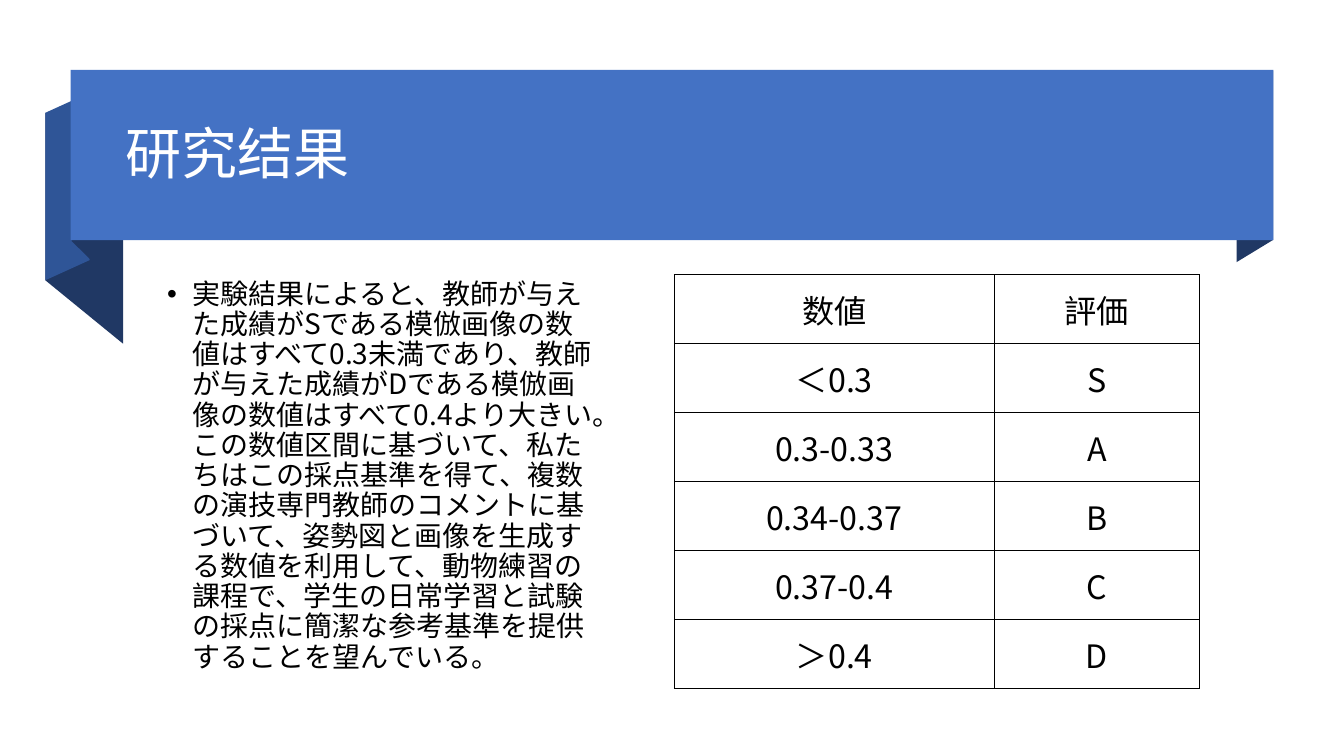
import dataclasses

import lxml.etree
import pptx
import pptx.dml.color
import pptx.enum.shapes
import pptx.enum.text
import pptx.oxml.ns
import pptx.util

Pt = pptx.util.Pt
qn = pptx.oxml.ns.qn
ALIGN = pptx.enum.text.PP_ALIGN
ANCHOR = pptx.enum.text.MSO_ANCHOR


@dataclasses.dataclass(frozen=True)
class Theme:
    font: str = "Noto Sans CJK JP"
    band: str = "4472C4"
    fold: str = "2F5597"
    shade: str = "203864"
    text: str = "000000"
    title_text: str = "FFFFFF"
    title_size: float = 40
    body_size: float = 20
    table_size: float = 23
    line_spacing: float = 0.9


THEME = Theme()

FOLDS = [
    (THEME.shade, [(909.4, 171.4), (883.4, 187.2), (883.4, 65.5), (909.4, 50.4)]),
    (THEME.shade, [(87.9, 245.5), (32.4, 200.2), (32.4, 80.6), (87.9, 126)]),
    (THEME.fold, [(64.1, 185.8), (32.4, 200.2), (32.4, 80.6), (64.1, 66.2)]),
    (THEME.shade, [(64.1, 185), (51.1, 172.1), (51.1, 50.4), (64.1, 64.1)]),
]

FINDINGS = (
    "実験結果によると、教師が与えた成績がSである模倣画像の数値はすべて0.3未満であり、"
    "教師が与えた成績がDである模倣画像の数値はすべて0.4より大きい。"
    "この数値区間に基づいて、私たちはこの採点基準を得て、"
    "複数の演技専門教師のコメントに基づいて、姿勢図と画像を生成する数値を利用して、"
    "動物練習の課程で、学生の日常学習と試験の採点に簡潔な参考基準を提供することを望んでいる。"
)

GRADES = [
    ("数値", "評価"),
    ("＜0.3", "S"),
    ("0.3-0.33", "A"),
    ("0.34-0.37", "B"),
    ("0.37-0.4", "C"),
    ("＞0.4", "D"),
]


def rgb(color):
    return pptx.dml.color.RGBColor.from_string(color)


def paint(sp, color):
    sp.shadow.inherit = False
    sp.fill.solid()
    sp.fill.fore_color.rgb = rgb(color)
    sp.line.fill.background()


def write(tf, text, size, color, align=ALIGN.LEFT):
    tf.text = text
    p = tf.paragraphs[0]
    p.alignment = align
    r = p.runs[0]
    r.font.size = Pt(size)
    r.font.name = THEME.font
    r.font.color.rgb = rgb(color)
    ea = lxml.etree.SubElement(r.font._element, qn("a:ea"))
    ea.set("typeface", THEME.font)
    return p


def add_fold(s, color, points):
    corners = [(Pt(x), Pt(y)) for x, y in points]
    builder = s.shapes.build_freeform(*corners[0])
    builder.add_line_segments(corners[1:], close=True)
    paint(builder.convert_to_shape(), color)


def add_band(s, x, y, w, h):
    rect = pptx.enum.shapes.MSO_SHAPE.RECTANGLE
    paint(s.shapes.add_shape(rect, Pt(x), Pt(y), Pt(w), Pt(h)), THEME.band)


def add_title(s, text, x, y, w, h):
    sp = s.shapes.title
    s.shapes._spTree.append(sp._element)
    sp.left, sp.top, sp.width, sp.height = Pt(x), Pt(y), Pt(w), Pt(h)
    sp.text_frame.vertical_anchor = ANCHOR.MIDDLE
    p = write(sp.text_frame, text, THEME.title_size, THEME.title_text)
    p.line_spacing = THEME.line_spacing


def add_bullet(s, text, x, y, w, h):
    tf = s.shapes.add_textbox(Pt(x), Pt(y), Pt(w), Pt(h)).text_frame
    tf.word_wrap = True
    p = write(tf, text, THEME.body_size, THEME.text)
    p.line_spacing = THEME.line_spacing
    pPr = p._p.get_or_add_pPr()
    pPr.set("marL", str(Pt(18)))
    pPr.set("indent", str(Pt(-18)))
    lxml.etree.SubElement(pPr, qn("a:buFont")).set("typeface", "Arial")
    lxml.etree.SubElement(pPr, qn("a:buChar")).set("char", "•")


def add_borders(cell):
    tcPr = cell._tc.get_or_add_tcPr()
    for i, side in enumerate(("a:lnL", "a:lnR", "a:lnT", "a:lnB")):
        ln = lxml.etree.Element(qn(side), w=str(Pt(1)))
        fill = lxml.etree.SubElement(ln, qn("a:solidFill"))
        lxml.etree.SubElement(fill, qn("a:srgbClr")).set("val", THEME.text)
        tcPr.insert(i, ln)


def add_grades(s, rows, x, y, widths, row_height):
    table = s.shapes.add_table(
        len(rows), len(widths), Pt(x), Pt(y), Pt(sum(widths)), Pt(row_height * len(rows))
    ).table
    table.first_row = table.horz_banding = False
    for column, width in zip(table.columns, widths):
        column.width = Pt(width)
    for i, values in enumerate(rows):
        table.rows[i].height = Pt(row_height)
        for j, value in enumerate(values):
            cell = table.cell(i, j)
            cell.fill.background()
            cell.vertical_anchor = ANCHOR.MIDDLE
            cell.margin_left = cell.margin_right = Pt(16)
            cell.margin_top = cell.margin_bottom = Pt(8)
            write(cell.text_frame, value, THEME.table_size, THEME.text, ALIGN.CENTER)
            add_borders(cell)


def main():
    prs = pptx.Presentation()
    prs.slide_width, prs.slide_height = Pt(960), Pt(540)
    s = prs.slides.add_slide(prs.slide_layouts[5])
    for color, points in FOLDS:
        add_fold(s, color, points)
    add_band(s, 50.4, 50, 859.2, 121.6)
    add_title(s, "研究结果", 82.8, 59.8, 811.4, 104.4)
    add_bullet(s, FINDINGS, 112.3, 196.5, 319, 281)
    add_grades(s, GRADES, 481.7, 196.2, (228.6, 146.4), 49.25)
    prs.save("out.pptx")


if __name__ == "__main__":
    main()
